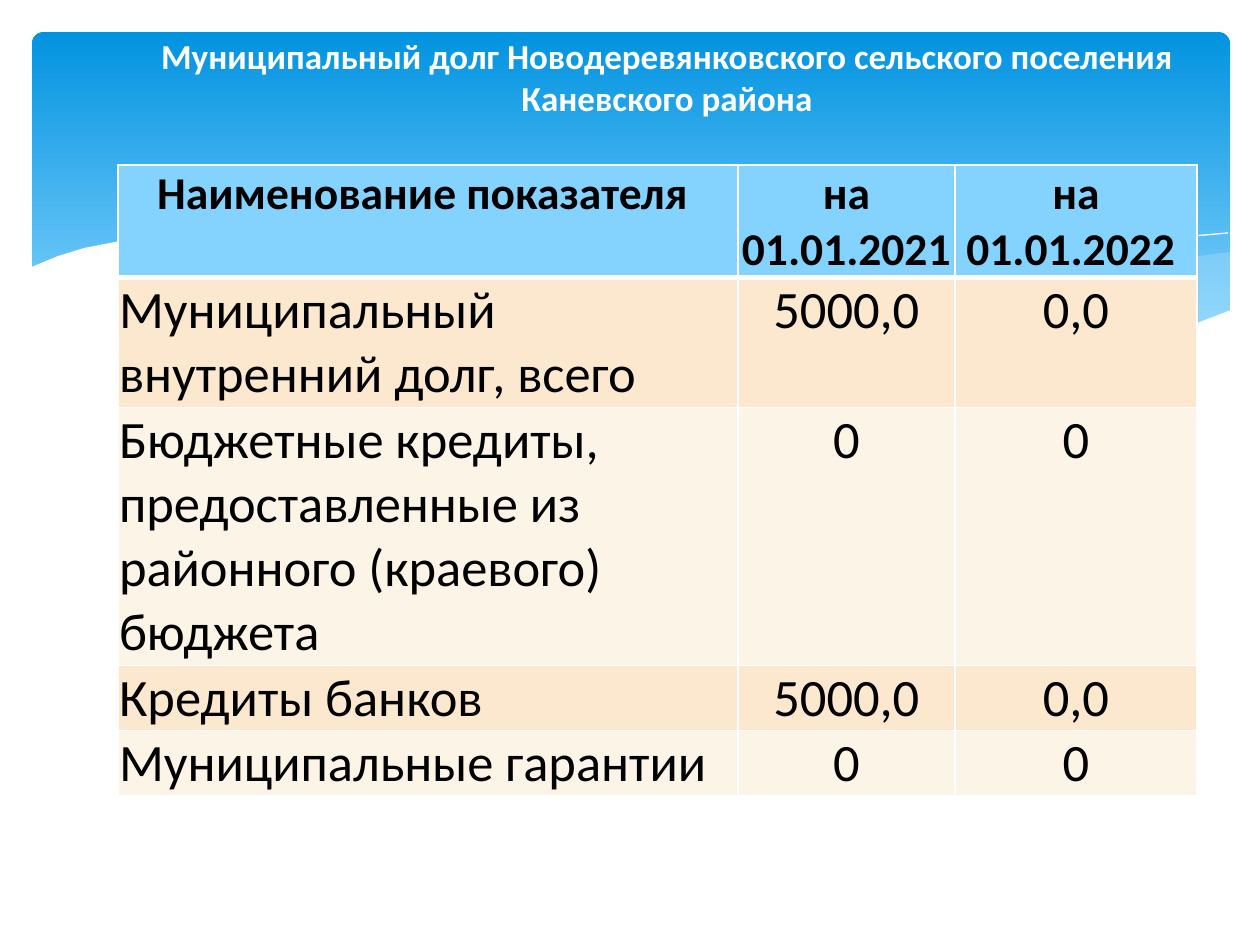
from lxml.etree import SubElement
from pptx import Presentation
from pptx.dml.color import RGBColor
from pptx.enum.shapes import MSO_SHAPE
from pptx.enum.text import MSO_ANCHOR, MSO_AUTO_SIZE, PP_ALIGN
from pptx.oxml.ns import qn
from pptx.util import Pt

PX = 914400 / 126
COLORS = {"sky": "0293E0", "light": "83D3FE", "foam": "C6E7FC", "white": "FFFFFF",
          "black": "000000", "odd": "FBE8CF", "even": "FDF4E8"}

RIGHT_WAVE = [(1198, 220), (1162, 225), (1128, 233), (1053, 249), (982, 267), (917, 280),
              (858, 292), (801, 302), (856, 309), (907, 315), (980, 318), (1044, 316),
              (1098, 308), (1146, 298), (1198, 279)]
MIDDLE_WAVE = [(1093, 312), (1023, 302), (944, 288), (858, 270), (761, 248), (685, 230),
               (616, 217), (554, 209), (497, 204), (423, 201), (362, 205), (328, 209),
               (399, 219), (477, 234), (587, 260), (681, 280), (767, 297), (844, 308),
               (910, 316), (985, 318), (1048, 317)]
LONG_CREST = [(357, 214), (390, 209), (456, 204), (535, 205), (611, 210), (701, 220),
              (806, 236), (926, 262), (1015, 284), (1111, 311)]
SHORT_CREST = [(740, 292), (815, 272), (910, 249), (1021, 225), (1096, 212), (1150, 205),
               (1196, 201)]
WHITE_WAVE = [(1199, 278), (1165, 291), (1127, 302), (1086, 309), (1039, 315), (987, 317),
              (927, 315), (860, 308), (784, 298), (698, 283), (602, 262), (531, 245),
              (461, 229), (396, 216), (336, 207), (283, 202), (234, 200), (191, 200),
              (152, 201), (118, 204), (88, 209), (52, 216), (26, 224), (-3, 236),
              (-3, 383), (1199, 383)]

ROWS = [
    ("Наименование показателя ", "на 01.01.2021 ", "на 01.01.2022 "),
    ("Муниципальный внутренний долг, всего", "5000,0", "0,0"),
    ("Бюджетные кредиты, предоставленные из районного (краевого) бюджета", "0", "0"),
    ("Кредиты банков", "5000,0", "0,0"),
    ("Муниципальные гарантии", "0", "0"),
]


def px(length):
    """Turn pixels into EMU."""
    return round(length * PX)


def rgb(name):
    """Look up a palette colour."""
    return RGBColor.from_string(COLORS[name])


def write(frame, text, size, color="black", bold=False, align=PP_ALIGN.LEFT):
    """Put one formatted paragraph into a text frame."""
    para = frame.paragraphs[0]
    para.alignment = align
    span = para.add_run()
    span.text = text
    span.font.name = "Calibri"
    span.font.size = Pt(size)
    span.font.bold = bold
    span.font.color.rgb = rgb(color)


def add_wave(page, box, points, fill=None, opacity=100):
    """Draw a filled wave, or an open white crest when no fill is given."""
    builder = page.shapes.build_freeform(*points[0], scale=PX)
    builder.add_line_segments(points[1:], close=fill is not None)
    wave = builder.convert_to_shape(px(box[0]), px(box[1]))
    wave.shadow.inherit = False
    if fill is None:
        wave.fill.background()
        wave.line.color.rgb = rgb("white")
        wave.line.width = Pt(0)
        return
    wave.line.fill.background()
    wave.fill.solid()
    wave.fill.fore_color.rgb = rgb(fill)
    if opacity < 100:
        color = wave.fill._xPr.find(qn("a:solidFill"))[0]
        SubElement(color, qn("a:alpha"), val=str(opacity * 1000))


def add_banner(page, box):
    """Draw the gradient panel and the waves across its foot."""
    panel = page.shapes.add_shape(MSO_SHAPE.ROUNDED_RECTANGLE, *map(px, box))
    panel.adjustments[0] = 0.034
    panel.shadow.inherit = False
    panel.line.fill.background()
    panel.fill.gradient()
    panel.fill.gradient_angle = 270
    for stop, position, color in zip(panel.fill.gradient_stops, (0, 0.9), ("sky", "light")):
        stop.position = position
        stop.color.rgb = rgb(color)
    add_wave(page, box, RIGHT_WAVE, "foam", 29)
    add_wave(page, box, MIDDLE_WAVE, "foam", 40)
    add_wave(page, box, LONG_CREST)
    add_wave(page, box, SHORT_CREST)
    add_wave(page, box, WHITE_WAVE, "white")


def add_title(page, box, text):
    """Move and fill the title placeholder."""
    title = page.shapes.title
    title.left, title.top, title.width, title.height = map(px, box)
    frame = title.text_frame
    frame.word_wrap = True
    frame.auto_size = MSO_AUTO_SIZE.NONE
    frame.vertical_anchor = MSO_ANCHOR.MIDDLE
    write(frame, text, 20, "white", True, PP_ALIGN.CENTER)


def set_borders(cell, widths):
    """Give a cell white borders, with widths in points by side."""
    properties = cell._tc.get_or_add_tcPr()
    for index, (side, width) in enumerate(widths.items()):
        line = properties.makeelement(qn(f"a:ln{side}"), {"w": str(Pt(width))})
        fill = SubElement(line, qn("a:solidFill"))
        SubElement(fill, qn("a:srgbClr"), val=COLORS["white"])
        properties.insert(index, line)


def add_debt_table(page, box, widths, heights):
    """Build the debt table with a header and banded rows."""
    table = page.shapes.add_table(len(ROWS), len(widths), *map(px, box)).table
    for column, width in zip(table.columns, widths):
        column.width = px(width)
    for r, (texts, height) in enumerate(zip(ROWS, heights)):
        table.rows[r].height = px(height)
        header = r == 0
        band = "light" if header else "odd" if r % 2 else "even"
        for c, text in enumerate(texts):
            cell = table.cell(r, c)
            cell.margin_left = cell.margin_right = cell.margin_top = px(1)
            cell.margin_bottom = 0
            cell.fill.solid()
            cell.fill.fore_color.rgb = rgb(band)
            set_borders(cell, {"L": 1, "R": 1, "T": 3 if r == 1 else 1, "B": 3 if header else 1})
            align = PP_ALIGN.CENTER if header or c else PP_ALIGN.LEFT
            write(cell.text_frame, text, 26 if header else 30, bold=header, align=align)


def main():
    """Build the slide and save the deck."""
    deck = Presentation()
    deck.slide_width, deck.slide_height = px(1260), px(945)
    page = deck.slides.add_slide(deck.slide_layouts[5])
    add_banner(page, (32, 32, 1198, 340))
    add_debt_table(page, (118, 165, 1079, 630), (620, 217, 242), (112, 130, 258, 65, 65))
    add_title(page, (137, 26, 1060, 100),
              "Муниципальный долг Новодеревянковского сельского поселения Каневского района")
    title = page.shapes.title._element
    title.getparent().append(title)
    deck.save("out.pptx")


if __name__ == "__main__":
    main()
